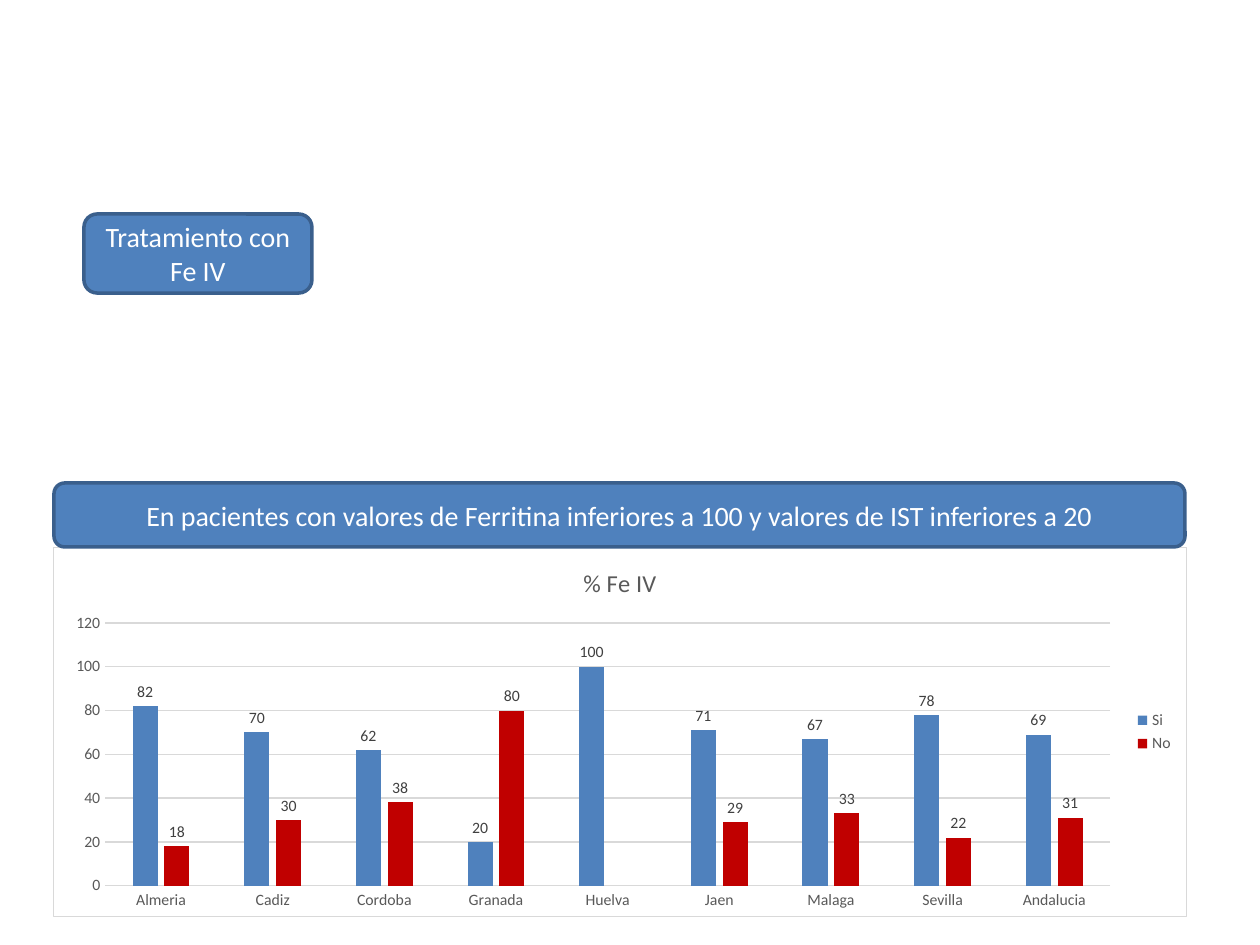
from lxml import etree
from pptx import Presentation
from pptx.chart.data import CategoryChartData
from pptx.dml.color import RGBColor
from pptx.enum.chart import XL_CHART_TYPE, XL_LABEL_POSITION, XL_LEGEND_POSITION, XL_TICK_MARK
from pptx.enum.shapes import MSO_SHAPE
from pptx.enum.text import MSO_ANCHOR, PP_ALIGN
from pptx.oxml import parse_xml
from pptx.oxml.ns import nsdecls, qn
from pptx.util import Emu, Pt

COLUMNS = XL_CHART_TYPE.COLUMN_CLUSTERED
OUTSIDE = XL_LABEL_POSITION.OUTSIDE_END
RIGHT = XL_LEGEND_POSITION.RIGHT
NO_TICK = XL_TICK_MARK.NONE
ROUNDED = MSO_SHAPE.ROUNDED_RECTANGLE
MIDDLE = MSO_ANCHOR.MIDDLE
CENTER = PP_ALIGN.CENTER

FONT = "Calibri"
BLACK = RGBColor(0x00, 0x00, 0x00)
WHITE = RGBColor(0xFF, 0xFF, 0xFF)
BLUE = RGBColor(0x4F, 0x81, 0xBD)
DARK_BLUE = RGBColor(0x3A, 0x5F, 0x8C)
RED = RGBColor(0xC0, 0x00, 0x00)
GRAY = RGBColor(0x59, 0x59, 0x59)
DARK_GRAY = RGBColor(0x40, 0x40, 0x40)
LIGHT_GRAY = RGBColor(0xD9, 0xD9, 0xD9)

PROVINCES = ["Almeria", "Cadiz", "Cordoba", "Granada", "Huelva",
             "Jaen", "Malaga", "Sevilla", "Andalucia"]
SERIES = [
    ("Si", [82, 70, 62, 20, 100, 71, 67, 78, 69], BLUE),
    ("No", [18, 30, 38, 80, None, 29, 33, 22, 31], RED),
]


def px(n):
    return Emu(n * 914400 // 126)


def set_font(font, size, color):
    font.name = FONT
    font.size = Pt(size)
    font.bold = False
    font.color.rgb = color


def set_line(line, color, width):
    line.color.rgb = color
    line.width = Pt(width)


def add_box(slide, text, x, y, w, h):
    s = slide.shapes.add_shape(ROUNDED, px(x), px(y), px(w), px(h))
    s.shadow.inherit = False
    s.fill.solid()
    s.fill.fore_color.rgb = BLUE
    set_line(s.line, DARK_BLUE, 2)
    tf = s.text_frame
    tf.word_wrap = True
    tf.vertical_anchor = MIDDLE
    p = tf.paragraphs[0]
    p.text = text
    p.alignment = CENTER
    set_font(p.font, 16, WHITE)


def frame_chart(chart, fill, border, width):
    """Give the whole chart area a fill and a border."""
    sp_pr = parse_xml(f"<c:spPr {nsdecls('c', 'a')}/>")
    area = etree.SubElement(sp_pr, qn("a:solidFill"))
    etree.SubElement(area, qn("a:srgbClr"), val=str(fill))
    ln = etree.SubElement(sp_pr, qn("a:ln"), w=str(Pt(width)))
    stroke = etree.SubElement(ln, qn("a:solidFill"))
    etree.SubElement(stroke, qn("a:srgbClr"), val=str(border))
    chart.element.find(qn("c:chart")).addnext(sp_pr)


def style_axis(axis):
    axis.major_tick_mark = NO_TICK
    axis.minor_tick_mark = NO_TICK
    set_font(axis.tick_labels.font, 9, GRAY)


def add_column_chart(slide, title, x, y, w, h):
    data = CategoryChartData()
    data.categories = PROVINCES
    for name, values, _ in SERIES:
        data.add_series(name, values)
    chart = slide.shapes.add_chart(COLUMNS, px(x), px(y), px(w), px(h), data).chart
    set_font(chart.font, 10, BLACK)
    frame_chart(chart, WHITE, LIGHT_GRAY, 0.75)

    # Title and legend
    chart.has_title = True
    p = chart.chart_title.text_frame.paragraphs[0]
    p.text = title
    set_font(p.font, 14, GRAY)
    chart.chart_title.include_in_layout = False
    chart.has_legend = True
    chart.legend.position = RIGHT
    chart.legend.include_in_layout = False
    set_font(chart.legend.font, 9, GRAY)

    # Axes
    style_axis(chart.category_axis)
    set_line(chart.category_axis.format.line, LIGHT_GRAY, 0.75)
    style_axis(chart.value_axis)
    chart.value_axis.format.line.fill.background()
    set_line(chart.value_axis.major_gridlines.format.line, LIGHT_GRAY, 0.75)

    # Columns and their labels
    plot = chart.plots[0]
    plot.vary_by_categories = False
    plot.gap_width = 219
    plot.overlap = -27
    for series, (_, _, color) in zip(plot.series, SERIES):
        series.format.fill.solid()
        series.format.fill.fore_color.rgb = color
        labels = series.data_labels
        labels.show_value = True
        labels.position = OUTSIDE
        set_font(labels.font, 9, DARK_GRAY)


def main():
    prs = Presentation()
    prs.slide_width, prs.slide_height = px(1260), px(945)
    slide = prs.slides.add_slide(prs.slide_layouts[6])

    add_column_chart(slide, "% Fe IV", 53, 547, 1134, 370)
    add_box(slide, "Tratamiento con Fe IV", 84, 214, 228, 79)
    add_box(slide, "En pacientes con valores de Ferritina inferiores a 100 "
                   "y valores de IST inferiores a 20", 54, 483, 1131, 64)

    prs.save("out.pptx")


if __name__ == "__main__":
    main()
